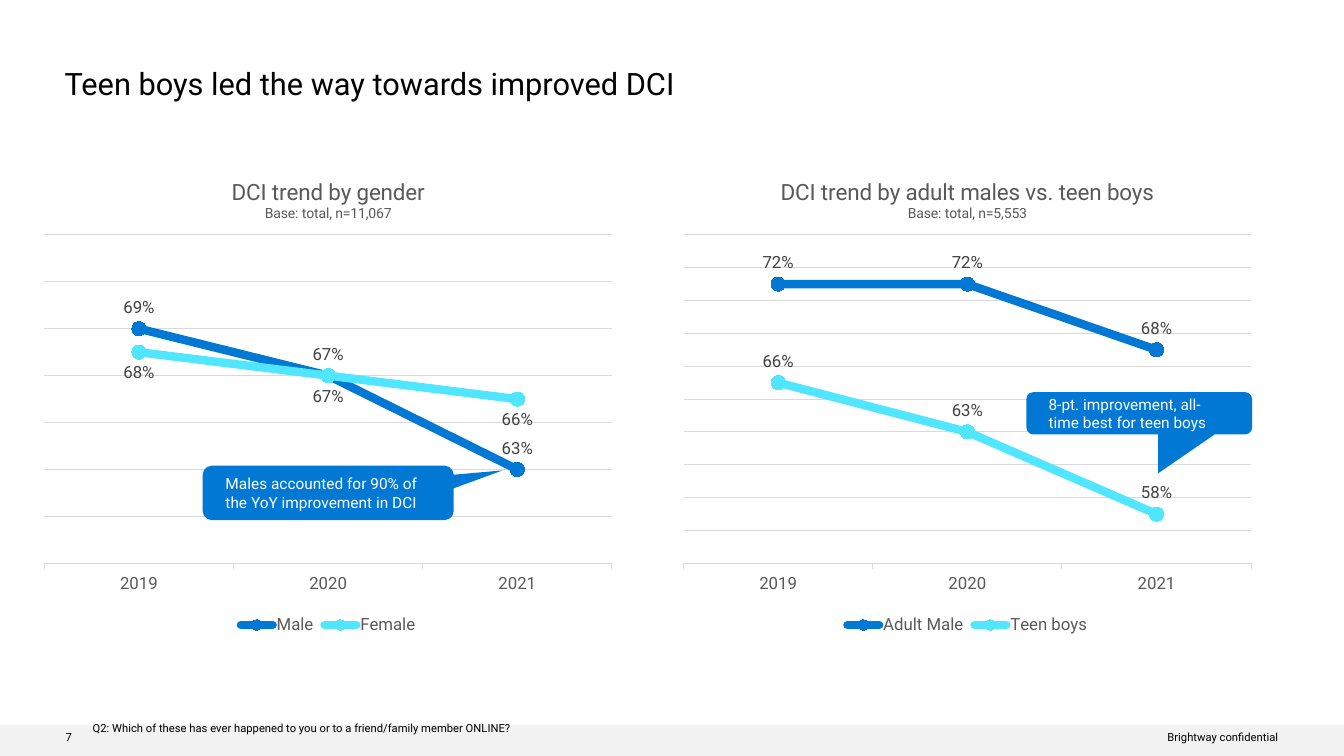
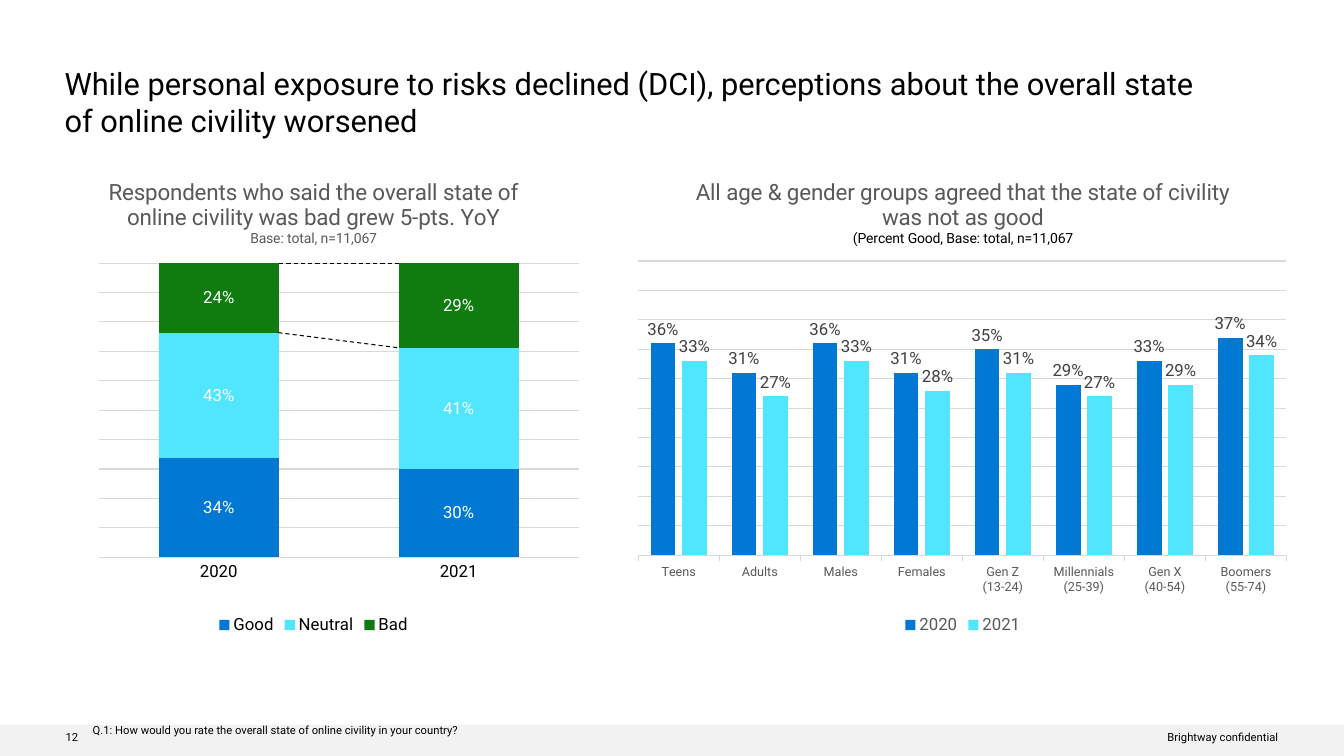
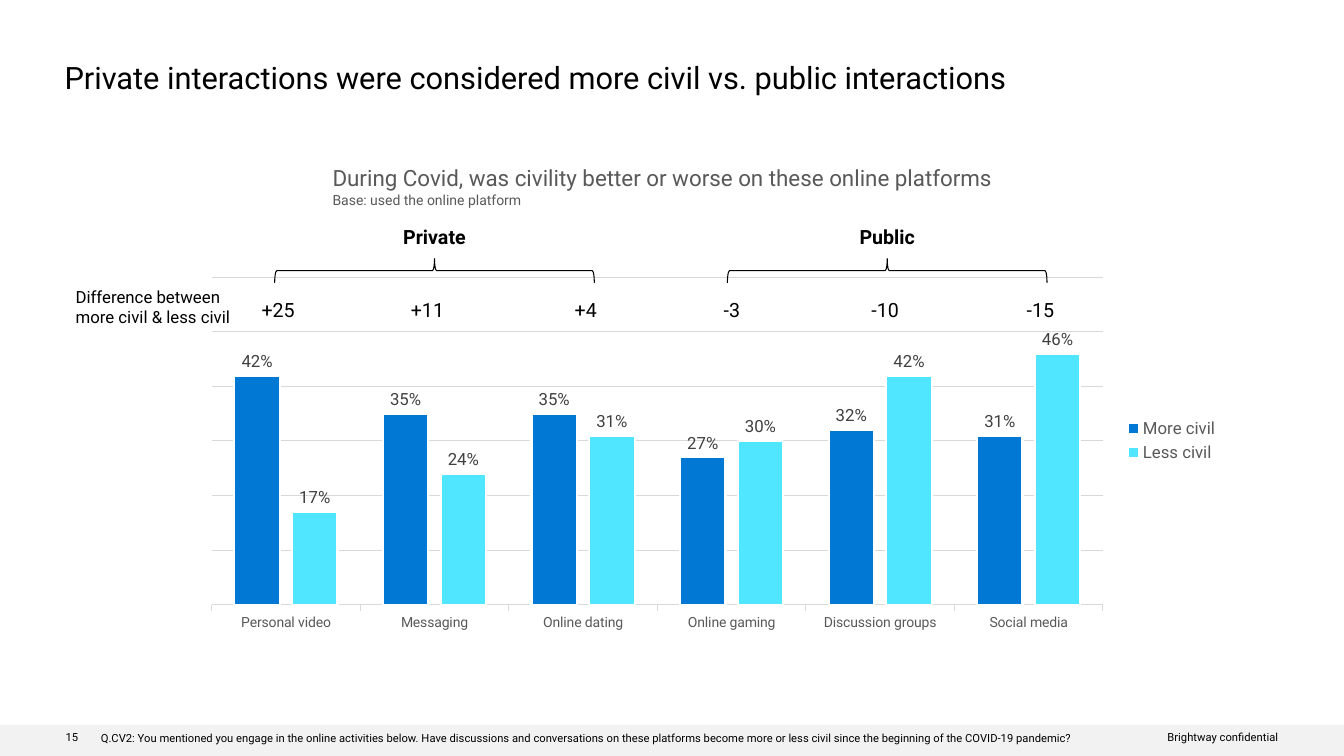
from dataclasses import dataclass

from lxml import etree
from pptx import Presentation
from pptx.chart.data import CategoryChartData
from pptx.dml.color import RGBColor
from pptx.enum.chart import XL_CHART_TYPE as CT, XL_LABEL_POSITION as LP
from pptx.enum.chart import XL_LEGEND_POSITION as LEGEND, XL_MARKER_STYLE as MARKER
from pptx.enum.chart import XL_TICK_MARK as TICK
from pptx.enum.dml import MSO_LINE
from pptx.enum.shapes import MSO_CONNECTOR, MSO_SHAPE as SHAPE
from pptx.enum.text import MSO_ANCHOR as ANCHOR, MSO_AUTO_SIZE, PP_ALIGN as ALIGN
from pptx.oxml.ns import qn
from pptx.util import Inches, Pt


@dataclass(frozen=True)
class Theme:
    font: str = "Roboto"
    black: str = "000000"
    white: str = "FFFFFF"
    grey: str = "595959"
    label: str = "404040"
    grid: str = "D9D9D9"
    band: str = "F2F2F2"
    blue: str = "0078D4"
    cyan: str = "50E6FF"
    green: str = "107C10"
    title: int = 22
    heading: int = 16
    subhead: int = 14
    body: int = 12
    callout: int = 11
    small: int = 10
    tiny: int = 9
    footer: int = 8


T = Theme()
W, H = 13.33, 7.5
BAND_TOP = 7.19
FOOTER_Y = 7.25
CONFIDENTIAL = "Brightway confidential"
SERIES_COLORS = (T.blue, T.cyan, T.green)

CHART_TOP, CHART_H = 1.59, 4.75
YEARS = ["2019", "2020", "2021"]

SLIDES = [
    dict(
        number="7", title="Teen boys led the way towards improved DCI",
        title_box=(0.64, 0.64, 11.41, 0.37),
        note="Q2: Which of these has ever happened to you or to a friend/family member ONLINE?",
        note_at=(0.92, 7.16),
        charts=[
            dict(
                kind=CT.LINE_MARKERS, box=(0.32, CHART_TOP, 5.87, CHART_H),
                plot=(0.44, 2.33, 5.63, 3.26),
                title="DCI trend by gender", base="Base: total, n=11,067",
                cats=YEARS, scale=(0.59, 0.73, 0.02),
                series=[("Male", (0.69, 0.67, 0.63), LP.ABOVE),
                        ("Female", (0.68, 0.67, 0.66), LP.BELOW)],
            ),
            dict(
                kind=CT.LINE_MARKERS, box=(6.66, CHART_TOP, 5.87, CHART_H),
                plot=(6.78, 2.33, 5.63, 3.26),
                title="DCI trend by adult males vs. teen boys", base="Base: total, n=5,553",
                cats=YEARS, scale=(0.55, 0.75, 0.02),
                series=[("Adult Male", (0.72, 0.72, 0.68), LP.ABOVE),
                        ("Teen boys", (0.66, 0.63, 0.58), LP.ABOVE)],
            ),
        ],
    ),
    dict(
        number="12",
        title="While personal exposure to risks declined (DCI), perceptions about "
              "the overall state of online civility worsened",
        title_box=(0.64, 0.64, 11.41, 0.74),
        note="Q.1: How would you rate the overall state of online civility in your country?",
        note_at=(0.92, 7.18),
        charts=[
            dict(
                kind=CT.COLUMN_STACKED_100, box=(0.32, CHART_TOP, 5.58, CHART_H),
                plot=(0.98, 2.61, 4.76, 2.92), overlap=100,
                title="Respondents who said the overall state of online civility "
                      "was bad grew 5-pts. YoY",
                base="Base: total, n=11,067",
                cats=YEARS[1:], tick=TICK.NONE, text=T.black, label=T.white,
                series=[("Good", (0.34, 0.3), LP.CENTER),
                        ("Neutral", (0.43, 0.41), LP.CENTER),
                        ("Bad", (0.24, 0.29), LP.CENTER)],
            ),
            dict(
                kind=CT.COLUMN_CLUSTERED, box=(6.2, CHART_TOP, 6.7, CHART_H),
                plot=(6.33, 2.59, 6.43, 2.92),
                title="All age & gender groups agreed that the state of civility was not as good",
                base="(Percent Good, Base: total, n=11,067", base_color=T.black,
                cats=["Teens", "Adults", "Males", "Females", "Gen Z\n(13-24)",
                      "Millennials\n(25-39)", "Gen X\n(40-54)", "Boomers\n(55-74)"],
                cat_size=T.tiny, scale=(0, 0.5, 0.05),
                series=[("2020", (0.36, 0.31, 0.36, 0.31, 0.35, 0.29, 0.33, 0.37), LP.OUTSIDE_END),
                        ("2021", (0.33, 0.27, 0.33, 0.28, 0.31, 0.27, 0.29, 0.34), LP.OUTSIDE_END)],
            ),
        ],
    ),
    dict(
        number="15", title="Private interactions were considered more civil vs. public interactions",
        title_box=(0.64, 0.58, 11.41, 0.37),
        note="Q.CV2: You mentioned you engage in the online activities below. Have discussions "
             "and conversations on these platforms become more or less civil since the "
             "beginning of the COVID-19 pandemic?",
        note_at=(1, 7.26),
        charts=[
            dict(
                kind=CT.COLUMN_CLUSTERED, box=(1.89, 2.4, 10.3, 3.94),
                plot=(2.1, 2.48, 8.84, 3.52), legend=LEGEND.RIGHT, outline=T.white,
                cats=["Personal video", "Messaging", "Online dating", "Online gaming",
                      "Discussion groups", "Social media"],
                cat_size=T.small, scale=(0, 0.65, 0.1),
                series=[("More civil", (0.42, 0.35, 0.35, 0.27, 0.32, 0.31), LP.OUTSIDE_END),
                        ("Less civil", (0.17, 0.24, 0.31, 0.3, 0.42, 0.46), LP.OUTSIDE_END)],
            ),
        ],
    ),
]

CALLOUTS = [
    ("Males accounted for 90% of the YoY improvement in DCI",
     (2.01, 4.62, 2.49, 0.54), (0.695, -0.413, 0.167)),
    ("8-pt. improvement, all-time best for teen boys",
     (10.18, 3.89, 2.24, 0.42), (0.083, 1.42, 0.167)),
]
BAD_SHARE_LINES = [(2.76, 3.3, 3.95, 3.45), (2.77, 2.61, 3.96, 2.61)]
PLATFORM_HEADING = [("During Covid, was civility better or worse on these online platforms", T.heading),
                    ("Base: used the online platform", T.small)]
PLATFORM_GROUPS = [("Private", 4.31), ("Public", 8.8)]
DIFFERENCES = [("+25", 2.76), ("+11", 4.24), ("+4", 5.81),
               ("-3", 7.26), ("-10", 8.78), ("-15", 10.32)]


def rgb(color):
    return RGBColor.from_string(color)


def set_font(font, size, color=T.black, bold=False):
    font.name, font.size, font.bold = T.font, Pt(size), bold
    font.color.rgb = rgb(color)


def write(tf, lines, color=T.black, align=ALIGN.LEFT, bold=False, insets=(0, 0), anchor=ANCHOR.TOP):
    """Fill a text frame with (text, size) lines."""
    tf.word_wrap, tf.auto_size, tf.vertical_anchor = True, MSO_AUTO_SIZE.NONE, anchor
    tf.margin_left = tf.margin_right = Inches(insets[0])
    tf.margin_top = tf.margin_bottom = Inches(insets[1])
    for i, (text, size) in enumerate(lines):
        p = tf.add_paragraph() if i else tf.paragraphs[0]
        p.text, p.alignment = text, align
        set_font(p.font, size, color, bold)


def add_text(s, box, lines, **style):
    sp = s.shapes.add_textbox(*map(Inches, box))
    write(sp.text_frame, lines, **style)


def add_shape(s, preset, box, fill=None, line=None):
    sp = s.shapes.add_shape(preset, *map(Inches, box))
    sp.shadow.inherit = False
    if fill:
        sp.fill.solid()
        sp.fill.fore_color.rgb = rgb(fill)
    else:
        sp.fill.background()
    if line:
        sp.line.color.rgb, sp.line.width = rgb(line), Pt(0.75)
    else:
        sp.line.fill.background()
    return sp


def place_plot(chart, box, plot):
    """Fix the inner plot area; box and plot are in inches on the slide."""
    left, top, width, height = box
    x, y, w, h = plot
    shares = ((x - left) / width, (y - top) / height, w / width, h / height)
    area = chart._chartSpace.find(".//" + qn("c:plotArea"))
    for old in area.findall(qn("c:layout")):
        area.remove(old)
    layout = etree.Element(qn("c:layout"))
    manual = etree.SubElement(layout, qn("c:manualLayout"))
    settings = [("layoutTarget", "inner"), ("xMode", "edge"), ("yMode", "edge"),
                *zip("xywh", shares)]
    for tag, val in settings:
        etree.SubElement(manual, qn("c:" + tag)).set("val", str(val))
    area.insert(0, layout)


def style_series(series, color, is_line, outline):
    if is_line:
        series.smooth = False
        line = series.format.line
        line.color.rgb, line.width = rgb(color), Pt(6)
        series._element.find(qn("c:spPr")).find(qn("a:ln")).set("cap", "rnd")
        series.marker.style, series.marker.size = MARKER.CIRCLE, 10
        body = series.marker.format
        body.line.color.rgb = rgb(color)
    else:
        series.invert_if_negative = False
        body = series.format
        if outline:
            body.line.color.rgb, body.line.width = rgb(outline), Pt(1.5)
    body.fill.solid()
    body.fill.fore_color.rgb = rgb(color)


def add_chart(s, kind, box, plot, cats, series, title=None, base=None, base_color=T.grey,
              scale=None, tick=TICK.OUTSIDE, text=T.grey, label=T.label, cat_size=T.body,
              legend=LEGEND.BOTTOM, overlap=-27, outline=None):
    data = CategoryChartData(number_format="0%")
    data.categories = cats
    for name, values, _ in series:
        data.add_series(name, values)
    chart = s.shapes.add_chart(kind, *map(Inches, box), data).chart
    set_font(chart.font, T.small)
    place_plot(chart, box, plot)

    chart.has_title = bool(title)
    if title:
        tf = chart.chart_title.text_frame
        tf.text = title
        set_font(tf.paragraphs[0].font, T.heading, T.grey)
        p = tf.add_paragraph()
        p.text = base
        set_font(p.font, T.small, base_color)

    chart.has_legend = True
    chart.legend.position, chart.legend.include_in_layout = legend, False
    set_font(chart.legend.font, T.body, text)

    x, y = chart.category_axis, chart.value_axis
    x.major_tick_mark = tick
    x.format.line.color.rgb, x.format.line.width = rgb(T.grid), Pt(0.75)
    set_font(x.tick_labels.font, cat_size, text)
    y.visible, y.has_major_gridlines = False, True
    y.major_gridlines.format.line.color.rgb = rgb(T.grid)
    y.major_gridlines.format.line.width = Pt(0.75)
    if scale:
        y.minimum_scale, y.maximum_scale, y.major_unit = scale

    is_line = kind == CT.LINE_MARKERS
    plot_group = chart.plots[0]
    plot_group.vary_by_categories = False
    if not is_line:
        plot_group.gap_width, plot_group.overlap = 100, overlap
    for ser, color, (_, _, position) in zip(plot_group.series, SERIES_COLORS, series):
        style_series(ser, color, is_line, outline)
        labels = ser.data_labels
        labels.show_value, labels.position = True, position
        labels.number_format, labels.number_format_is_linked = "0%", False
        set_font(labels.font, T.body, label)


def add_base_slide(prs, number, title, title_box, note, note_at, charts):
    """Add a slide with its title, footer band, footnote and charts."""
    s = prs.slides.add_slide(prs.slide_layouts[5])
    sp = s.shapes.title
    sp.left, sp.top, sp.width, sp.height = map(Inches, title_box)
    write(sp.text_frame, [(title, T.title)])
    add_shape(s, SHAPE.RECTANGLE, (0, BAND_TOP, W, H - BAND_TOP), T.band)
    add_text(s, (0.65, FOOTER_Y, 0.25, 0.12), [(number, T.footer)])
    add_text(s, (9.02, FOOTER_Y, 3.66, 0.12), [(CONFIDENTIAL, T.footer)], align=ALIGN.RIGHT)
    add_text(s, (*note_at, 10.06, 0.13), [(note, T.footer)])
    for chart in charts:
        add_chart(s, **chart)
    return s


def add_callouts(s):
    for text, box, adjustments in CALLOUTS:
        sp = add_shape(s, SHAPE.ROUNDED_RECTANGULAR_CALLOUT, box, T.blue)
        for i, value in enumerate(adjustments):
            sp.adjustments[i] = value
        write(sp.text_frame, [(text, T.callout)], color=T.white,
              insets=(0.2, 0.16), anchor=ANCHOR.MIDDLE)


def add_share_lines(s):
    for ends in BAD_SHARE_LINES:
        line = s.shapes.add_connector(MSO_CONNECTOR.STRAIGHT, *map(Inches, ends))
        line.line.color.rgb, line.line.width = rgb(T.black), Pt(0.75)
        line.line.dash_style = MSO_LINE.DASH
        etree.SubElement(line._element.spPr, qn("a:effectLst"))


def add_platform_notes(s):
    add_text(s, (3.2, 1.58, 6.85, 0.54), PLATFORM_HEADING, color=T.grey, insets=(0.1, 0.05))
    for name, center in PLATFORM_GROUPS:
        brace = add_shape(s, SHAPE.RIGHT_BRACE, (center - 0.12, 1.1, 0.24, 3.17), line=T.black)
        brace.rotation = 270
        add_text(s, (center - 0.5, 2.23, 1, 0.24), [(name, T.subhead)],
                 align=ALIGN.CENTER, bold=True)
    for text, center in DIFFERENCES:
        sp = add_shape(s, SHAPE.RECTANGLE, (center - 0.2, 2.96, 0.4, 0.24), T.white)
        write(sp.text_frame, [(text, T.subhead)], align=ALIGN.CENTER)
    add_text(s, (0.75, 2.84, 1.6, 0.4), [("Difference between more civil & less civil", T.body)])


def main():
    prs = Presentation()
    prs.slide_width, prs.slide_height = Inches(W), Inches(H)
    for content, add_details in zip(SLIDES, (add_callouts, add_share_lines, add_platform_notes)):
        add_details(add_base_slide(prs, **content))
    prs.save("out.pptx")


if __name__ == "__main__":
    main()
